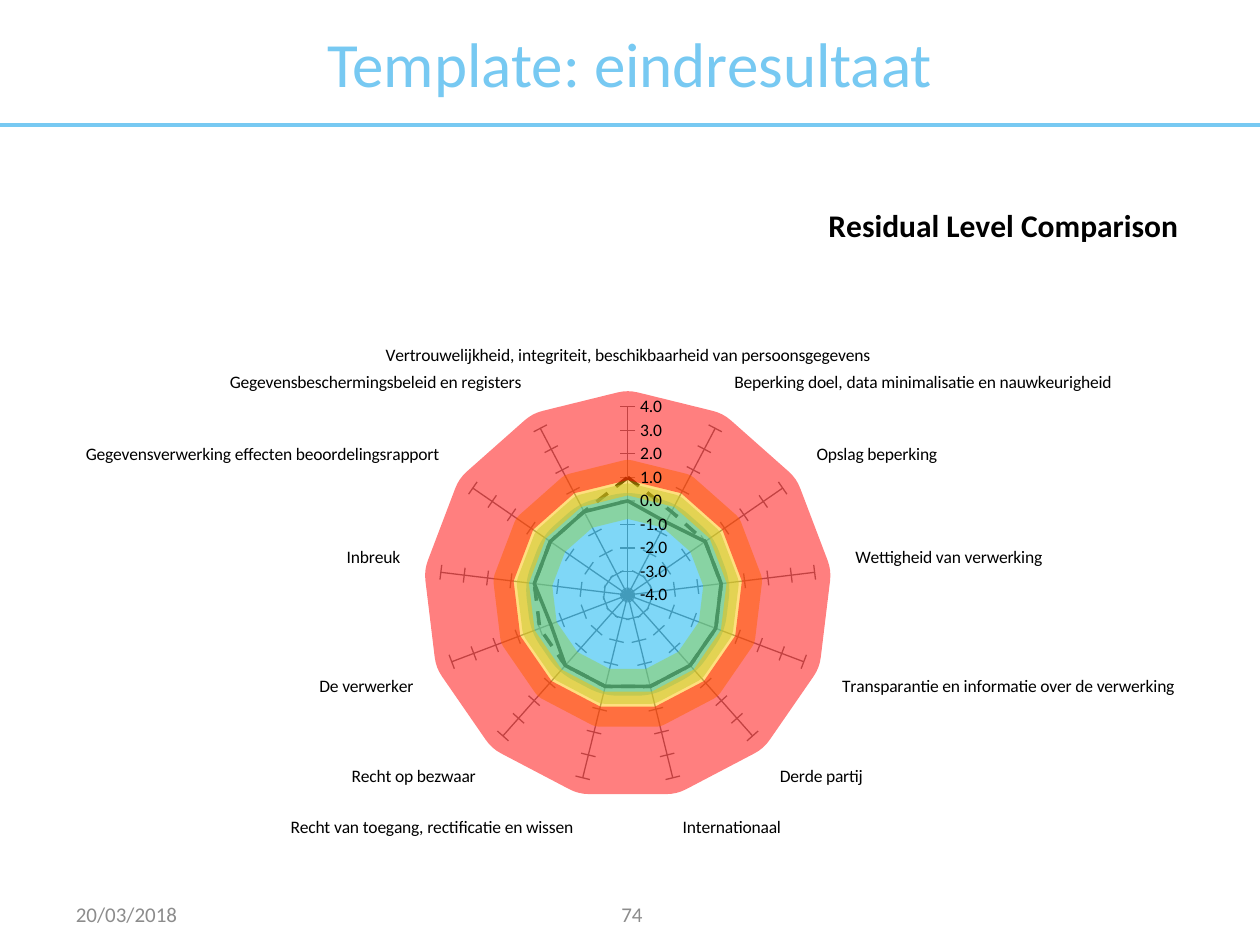
from lxml import etree
from pptx import Presentation
from pptx import util as u
from pptx.chart.data import CategoryChartData
from pptx.dml.color import RGBColor
from pptx.enum import chart as ch, dml, shapes, text
from pptx.oxml.ns import qn

FONT = "Calibri"
HUES = {
    "sky": "77C9F2", "gray": "8C8C8C", "axis": "868686", "black": "000000",
    "blue": "00B0F0", "green": "92D050", "amber": "FFC000", "red": "FF0000",
}
CATS = [
    "Vertrouwelijkheid, integriteit, beschikbaarheid van persoonsgegevens",
    "Beperking doel, data minimalisatie en nauwkeurigheid",
    "Opslag beperking",
    "Wettigheid van verwerking",
    "Transparantie en informatie over de verwerking",
    "Derde partij",
    "Internationaal",
    "Recht van toegang, rectificatie en wissen",
    "Recht op bezwaar",
    "De verwerker",
    "Inbreuk",
    "Gegevensverwerking effecten beoordelingsrapport",
    "Gegevensbeschermingsbeleid en registers",
]
COUNT = len(CATS)
LEVELS = [[0] * COUNT, [1] + [0] * (COUNT - 1)]
for spot in (1, 9):
    LEVELS[0][spot] = -0.5
# ring level, colour, width in points
BANDS = [(-2.5, "blue", 76), (0, "green", 20), (1, "amber", 20), (2.8, "red", 50)]


def hue(name):
    return RGBColor.from_string(HUES[name])


def style(font, size, color, bold=False):
    font.name, font.size, font.bold = FONT, u.Pt(size), bold
    font.color.rgb = hue(color)


def add_text(slide, words, box, size, color, align):
    frame = slide.shapes.add_textbox(*map(u.Cm, box)).text_frame
    frame.word_wrap = True
    frame.vertical_anchor = text.MSO_ANCHOR.MIDDLE
    frame.text = words
    par = frame.paragraphs[0]
    par.alignment = align
    style(par.runs[0].font, size, color)


def add_rule(slide, y):
    line = slide.shapes.add_connector(
        shapes.MSO_CONNECTOR.STRAIGHT, 0, u.Cm(y), u.Cm(25.4), u.Cm(y))
    line.line.color.rgb = hue("sky")
    line.line.width = u.Pt(1.75)
    etree.SubElement(line.element.spPr, qn("a:effectLst"))


def place(node, index, **parts):
    """Give a chart part a manual layout, in fractions of the chart."""
    for old in node.findall(qn("c:layout")):
        node.remove(old)
    layout = etree.Element(qn("c:layout"))
    node.insert(index, layout)
    manual = etree.SubElement(layout, qn("c:manualLayout"))
    for key, val in parts.items():
        etree.SubElement(manual, qn("c:" + key)).set("val", str(val))


def draw_line(series, color, width, alpha=None):
    line = series.format.line
    line.color.rgb = hue(color)
    line.width = u.Pt(width)
    if alpha:
        tint = line._ln.find(".//" + qn("a:srgbClr"))
        etree.SubElement(tint, qn("a:alpha")).set("val", str(alpha * 1000))
    etree.SubElement(line._ln, qn("a:round"))
    series.smooth = False
    series.marker.style = ch.XL_MARKER_STYLE.NONE


def set_axes(chart):
    axis = chart.value_axis
    axis.minimum_scale, axis.maximum_scale, axis.major_unit = -4, 4, 1
    axis.has_major_gridlines = False
    axis.major_tick_mark = ch.XL_TICK_MARK.CROSS
    axis.tick_labels.number_format = "0.0"
    axis.tick_labels.number_format_is_linked = False
    axis.format.line.color.rgb = hue("axis")
    grid = chart.category_axis
    grid.has_major_gridlines = True
    grid.major_gridlines.format.line.color.rgb = hue("axis")


def set_title(chart, words):
    chart.has_title = True
    frame = chart.chart_title.text_frame
    frame.text = words
    style(frame.paragraphs[0].runs[0].font, 18, "black", True)
    node = chart.element.find(".//" + qn("c:title"))
    place(node, 1, xMode="edge", yMode="edge", x=0.67, y=0.01)
    node.find(qn("c:overlay")).set("val", "1")


def add_radar(slide, box):
    data = CategoryChartData(number_format="General")
    data.categories = CATS
    rows = LEVELS + [[band[0]] * COUNT for band in BANDS]
    for num, row in enumerate(rows, 1):
        data.add_series(f"Series {num}", row)
    chart = slide.shapes.add_chart(
        ch.XL_CHART_TYPE.RADAR, *map(u.Cm, box), data).chart
    style(chart.font, 10, "black")
    chart.has_legend = False
    plot = chart.plots[0]
    plot.vary_by_categories = False
    set_axes(chart)
    set_title(chart, "Residual Level Comparison")
    lines = list(plot.series)
    for series in lines[:2]:
        draw_line(series, "black", 2)
    lines[1].format.line.dash_style = dml.MSO_LINE.DASH
    for series, (_, color, width) in zip(lines[2:], BANDS):
        draw_line(series, color, width, 50)


def main():
    deck = Presentation()
    deck.slide_width, deck.slide_height = u.Cm(25.4), u.Cm(19.05)
    slide = deck.slides.add_slide(deck.slide_layouts[6])
    mid, left = text.PP_ALIGN.CENTER, text.PP_ALIGN.LEFT
    add_rule(slide, 2.52)
    add_text(slide, "Template: eindresultaat", (0, 0, 25.4, 2.52), 36, "sky", mid)
    add_radar(slide, (1.27, 3.84, 22.86, 14.6))
    add_text(slide, "74", (9.78, 17.92, 5.92, 1.02), 12, "gray", mid)
    add_text(slide, "20/03/2018", (1.28, 17.91, 5.92, 1.02), 12, "gray", left)
    deck.save("out.pptx")


if __name__ == "__main__":
    main()
